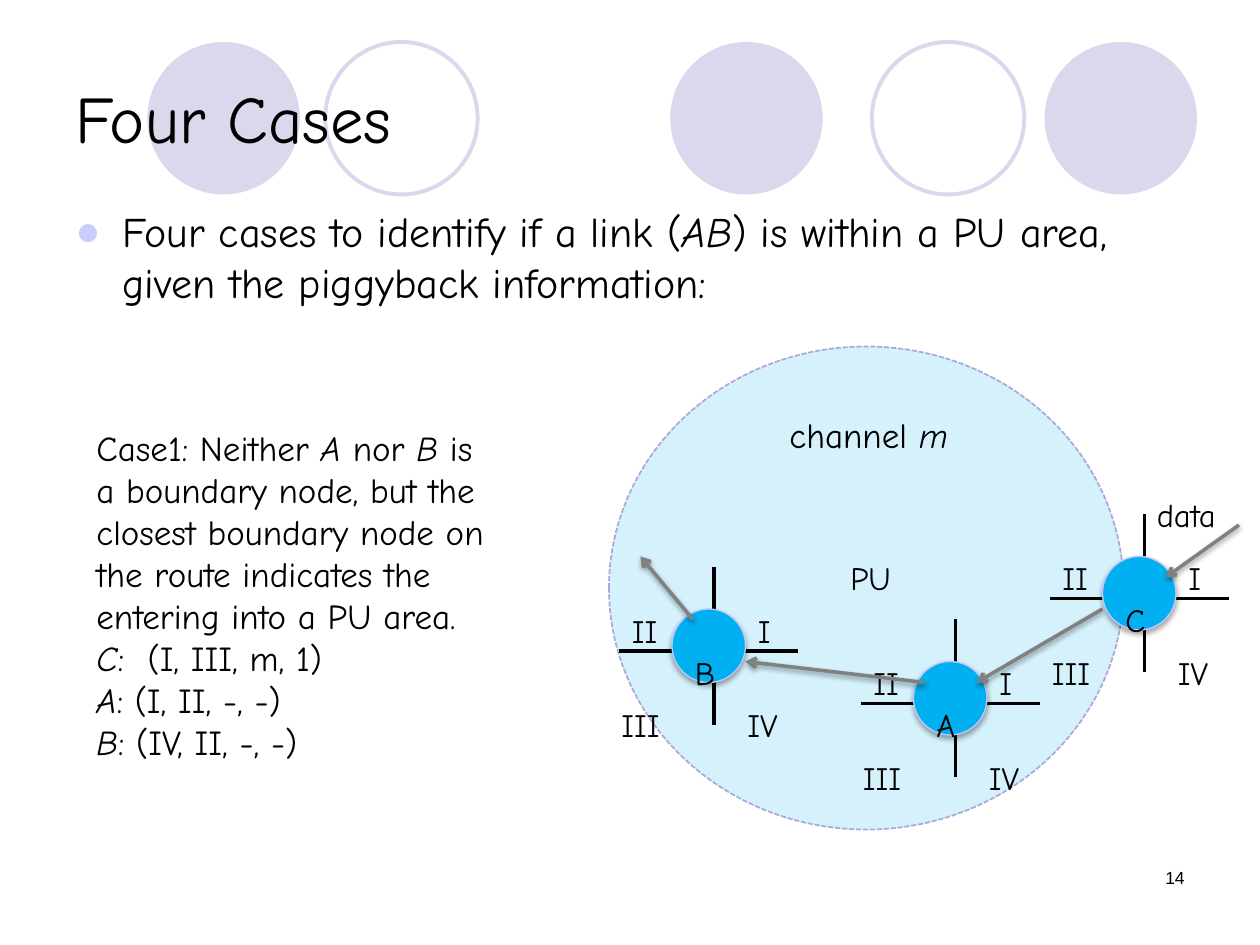
"""Build the "Four Cases" slide with its routing diagram of nodes A, B and C."""
from lxml.etree import SubElement
from pptx import Presentation
from pptx.dml.color import RGBColor
from pptx.enum.dml import MSO_LINE
from pptx.enum.shapes import MSO_CONNECTOR, MSO_SHAPE
from pptx.enum.text import MSO_ANCHOR, PP_ALIGN
from pptx.oxml.ns import qn
from pptx.util import Pt

BLACK = RGBColor(0x00, 0x00, 0x00)
GRAY = RGBColor(0x80, 0x80, 0x80)
SKY = RGBColor(0x00, 0xB0, 0xF0)
LILAC = RGBColor(0xD9, 0xD8, 0xEC)
AREA_EDGE = RGBColor(0xA9, 0xA9, 0xDA)
NODE_EDGE = RGBColor(0xC6, 0xC6, 0xFB)
BULLET = "CCCCFF"
FONT = "Comic Neue"

DECOR_TOP, DECOR_SIZE = 24, 87.12
DECOR = [(383, True), (596.9, True), (84.2, True), (498.2, False), (185.8, False)]

TITLE = [[("Four Cases", False)]]
BODY = [[("Four cases to identify if a link (", False), ("AB", True),
         (") is within a PU area, given the piggyback information:", False)]]
CHANNEL = [[("channel ", False), ("m", True)]]
CASE = [
    [("Case1: Neither ", False), ("A", True), (" nor ", False), ("B", True),
     (" is a boundary node, but the closest boundary node on the route"
      " indicates the entering into a PU area.", False)],
    [("C", True), (":  (I, III, m, 1)", False)],
    [("A", True), (": (I, II, -, -)", False)],
    [("B", True), (": (IV, II, -, -)", False)],
]

NODE_SIZE = 42
NODES = {"A": (522, 378), "B": (384, 348), "C": (630, 318)}
AXES = [((-30, 24), (72, 24)), ((24, 66), (24, -24))]
QUADRANTS = [("I", 42, -24, 30), ("II", -30, -24, 60),
             ("III", -36, 30, 60), ("IV", 36, 30, 48)]
ROUTE_TO_B = [((630, 348), (558, 390)), ((528.5, 390), (426, 378))]
ROUTE_ENDS = [((708, 300), (666, 330)), ((396, 354), (366, 318))]


def add_text(slide, box, paragraphs, size, font=FONT, lowered=False):
    shape = slide.shapes.add_textbox(*map(Pt, box))
    frame = shape.text_frame
    frame.word_wrap = True
    for index, pieces in enumerate(paragraphs):
        paragraph = frame.paragraphs[0] if index == 0 else frame.add_paragraph()
        for text, italic in pieces:
            run = paragraph.add_run()
            run.text = text
            run.font.name = font
            run.font.size = Pt(size)
            run.font.italic = italic
            run.font.color.rgb = BLACK
            if lowered:
                run.font._element.set("baseline", "-25000")
    return frame


def add_label(slide, text, left, top, width, height=30):
    add_text(slide, (left, top, width, height), [[(text, False)]], 32, lowered=True)


def add_ellipse(slide, left, top, width, height, fill=None, edge=None, weight=1):
    shape = slide.shapes.add_shape(MSO_SHAPE.OVAL, *map(Pt, (left, top, width, height)))
    shape.shadow.inherit = False
    if fill is None:
        shape.fill.background()
    else:
        shape.fill.solid()
        shape.fill.fore_color.rgb = fill
    if edge is None:
        shape.line.fill.background()
    else:
        shape.line.color.rgb = edge
        shape.line.width = Pt(weight)
    return shape


def add_line(slide, start, end, color, weight):
    line = slide.shapes.add_connector(MSO_CONNECTOR.STRAIGHT, *map(Pt, start + end))
    line.line.color.rgb = color
    line.line.width = Pt(weight)
    SubElement(line._element.spPr, qn("a:effectLst"))
    return line


def set_alpha(color_element, percent):
    SubElement(color_element, qn("a:alpha"), val=str(percent * 1000))


def add_shadow(shape, distance, percent):
    effects = shape._element.spPr.find(qn("a:effectLst"))
    shadow = SubElement(effects, qn("a:outerShdw"), blurRad=str(Pt(3.1)),
                        dist=str(Pt(distance)), dir="5400000", rotWithShape="0")
    set_alpha(SubElement(shadow, qn("a:srgbClr"), val="000000"), percent)


def add_arrow(slide, start, end):
    arrow = add_line(slide, start, end, GRAY, 2)
    SubElement(arrow.line._get_or_add_ln(), qn("a:tailEnd"), type="arrow")
    add_shadow(arrow, 1.6, 38)


def add_node(slide, name):
    left, top = NODES[name]
    for (x1, y1), (x2, y2) in AXES:
        add_line(slide, (left + x1, top + y1), (left + x2, top + y2), BLACK, 2.25)
    circle = add_ellipse(slide, left, top, NODE_SIZE, NODE_SIZE, SKY, NODE_EDGE, 0.75)
    add_shadow(circle, 1.8, 35)
    add_label(slide, name, left + 6, top, 30)
    for text, dx, dy, width in QUADRANTS:
        add_label(slide, text, left + dx, top + dy, width)


def add_heading(slide):
    for left, filled in DECOR:
        add_ellipse(slide, left, DECOR_TOP, DECOR_SIZE, DECOR_SIZE,
                    LILAC if filled else None, None if filled else LILAC, 2.25)
    title = add_text(slide, (36, 21.6, 648, 90), TITLE, 38)
    title.vertical_anchor = MSO_ANCHOR.MIDDLE
    body = add_text(slide, (36, 114, 648, 356), BODY, 24)
    paragraph = body.paragraphs[0]
    paragraph.space_before = Pt(4.8)
    properties = paragraph._p.get_or_add_pPr()
    properties.set("marL", str(Pt(27)))
    properties.set("indent", str(Pt(-27)))
    SubElement(SubElement(properties, qn("a:buClr")), qn("a:srgbClr"), val=BULLET)
    SubElement(properties, qn("a:buFont"), typeface="Arial")
    SubElement(properties, qn("a:buChar"), char="●")
    number = add_text(slide, (516, 492, 168, 36), [[("14", False)]], 10, "Arial")
    number.paragraphs[0].alignment = PP_ALIGN.RIGHT


def add_diagram(slide):
    area = add_ellipse(slide, 348, 198, 294, 276, SKY, AREA_EDGE, 1)
    area.line.dash_style = MSO_LINE.SQUARE_DOT
    set_alpha(area._element.spPr.find(qn("a:solidFill"))[0], 17)
    add_label(slide, "PU", 478.8, 294, 54.7, 42.5)
    add_text(slide, (444, 232.5, 132, 43), CHANNEL, 20)
    add_text(slide, (48, 240, 240, 228), CASE, 20)
    add_node(slide, "A")
    for start, end in ROUTE_TO_B:
        add_arrow(slide, start, end)
    add_label(slide, "data", 654, 258, 72)
    add_node(slide, "B")
    add_node(slide, "C")
    for start, end in ROUTE_ENDS:
        add_arrow(slide, start, end)


def main():
    presentation = Presentation()
    presentation.slide_width, presentation.slide_height = Pt(720), Pt(540)
    slide = presentation.slides.add_slide(presentation.slide_layouts[6])
    add_heading(slide)
    add_diagram(slide)
    presentation.save("out.pptx")


if __name__ == "__main__":
    main()
